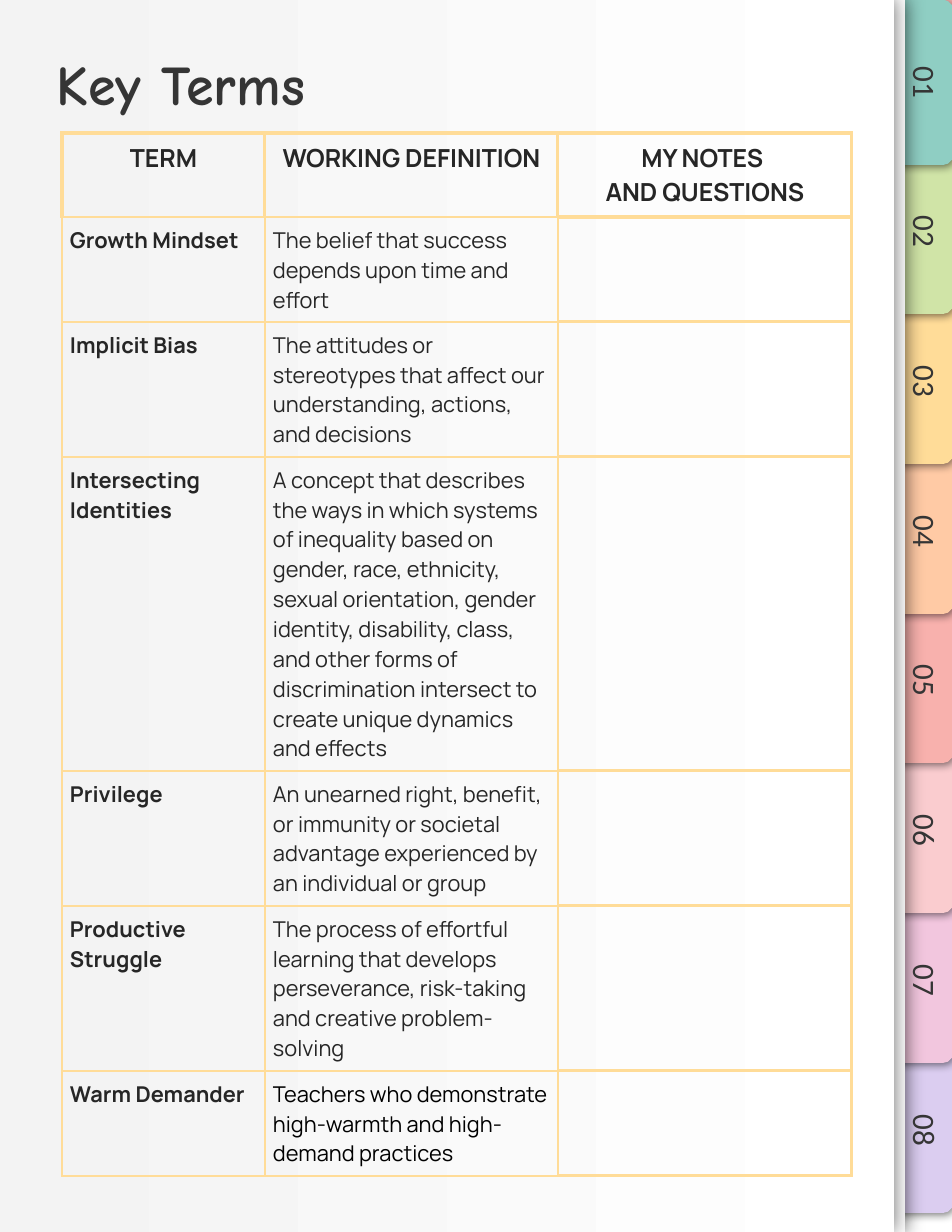
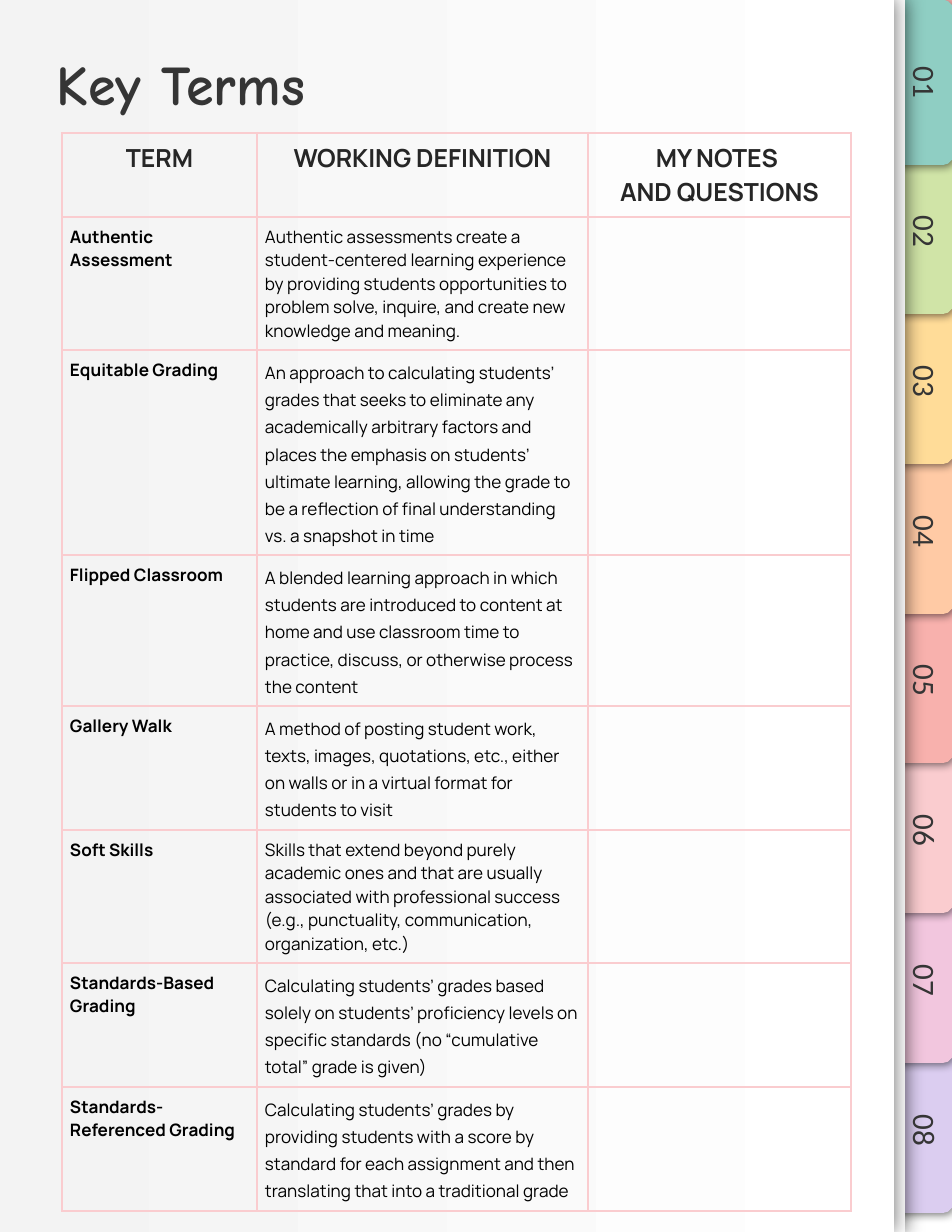
from lxml import etree
from pptx import Presentation, util as u
from pptx.dml.color import RGBColor
from pptx.enum import shapes, text
from pptx.oxml.ns import qn

PX_PER_INCH = 112
COLORS = {
    "backdrop": "F8B1AD", "white": "FFFFFF", "paper": "F3F3F3",
    "heading": "353535", "ink": "262626", "black": "000000",
    "yellow": "FFDC98", "pink": "FACCCF",
}
TAB_COLORS = ["8FCEC3", "D0E4A7", "FFDC98", "FFCAA5",
              "F8B1AD", "FACCCF", "F2C6DE", "DBCDF0"]
TAB_FIRST, TAB_LAST = 53, 1101
TAB_SHADOW = {"blur": 5.6, "distance": 1.5, "angle": 61}
PAPER_SHADOW = {"blur": 12.4, "distance": 0.8, "angle": 0}
TITLE_FONT, NUMBER_FONT, TABLE_FONT = "Comic Neue", "Calibri", "Manrope"
HEADERS = ["TERM", "WORKING DEFINITION", "MY NOTES \nAND QUESTIONS"]
TABLE_LEFT, TABLE_TOP, HEADER_HEIGHT = 62, 133, 84

# Each row: height, term, definition, then any format of the definition
MINDSET_TERMS = [
    (105, "Growth Mindset", "The belief that success depends upon time and effort", {}),
    (135, "Implicit Bias",
     "The attitudes or stereotypes that affect our understanding, actions, and decisions", {}),
    (314, "Intersecting Identities",
     "A concept that describes the ways in which systems of inequality based on gender, race, "
     "ethnicity, sexual orientation, gender identity, disability, class, and other forms of "
     "discrimination intersect to create unique dynamics and effects", {}),
    (135, "Privilege",
     "An unearned right, benefit, or immunity or societal advantage experienced by an "
     "individual or group", {}),
    (165, "Productive Struggle",
     "The process of effortful learning that develops perseverance, risk-taking and creative "
     "problem-solving", {}),
    (105, "Warm Demander",
     "Teachers who demonstrate high-warmth and high-demand practices", {"color": "black"}),
]
LOOSE = {"spacing": 1.15}
GRADING_TERMS = [
    (133, "Authentic Assessment",
     "Authentic assessments create a student-centered learning experience by providing students "
     "opportunities to problem solve, inquire, and create new knowledge and meaning.", {}),
    (205, "Equitable Grading",
     "An approach to calculating students’ grades that seeks to eliminate any academically "
     "arbitrary factors and places the emphasis on students’ ultimate learning, allowing the "
     "grade to be a reflection of final understanding vs. a snapshot in time", LOOSE),
    (151, "Flipped Classroom",
     "A blended learning approach in which students are introduced to content at home and use "
     "classroom time to practice, discuss, or otherwise process the content", LOOSE),
    (124, "Gallery Walk",
     "A method of posting student work, texts, images, quotations, etc., either on walls or in "
     "a virtual format for students to visit", LOOSE),
    (133, "Soft Skills",
     "Skills that extend beyond purely academic ones and that are usually associated with "
     "professional success (e.g., punctuality, communication, organization, etc.)", {}),
    (124, "Standards-Based Grading",
     "Calculating students’ grades based solely on students’ proficiency levels on specific "
     "standards (no “cumulative total” grade is given)", LOOSE),
    (124, "Standards-Referenced Grading",
     "Calculating students’ grades by providing students with a score by standard for each "
     "assignment and then translating that into a traditional grade", LOOSE),
]


def px(length):
    return u.Inches(length / PX_PER_INCH)


def rgb(color):
    return RGBColor.from_string(COLORS.get(color, color))


def write(frame, words, font=TABLE_FONT, size=14, color="ink", bold=False,
          centered=False, spacing=None):
    """Fill a text frame, one paragraph for each line of words."""
    for index, line in enumerate(words.split("\n")):
        para = frame.add_paragraph() if index else frame.paragraphs[0]
        para.alignment = text.PP_ALIGN.CENTER if centered else text.PP_ALIGN.LEFT
        if spacing:
            para.line_spacing = spacing
        span = para.add_run()
        span.text = line
        span.font.name, span.font.size, span.font.bold = font, u.Pt(size), bold
        span.font.color.rgb = rgb(color)


def set_margins(target, margin):
    target.margin_left = target.margin_right = px(margin)
    target.margin_top = target.margin_bottom = px(margin)


def add_shadow(shape, blur, distance, angle):
    effects = shape._element.spPr.find(qn("a:effectLst"))
    shadow = etree.SubElement(effects, qn("a:outerShdw"), blurRad=str(u.Pt(blur)),
                              dist=str(u.Pt(distance)), dir=str(angle * 60000),
                              algn="bl", rotWithShape="0")
    tint = etree.SubElement(shadow, qn("a:srgbClr"), val=COLORS["black"])
    etree.SubElement(tint, qn("a:alpha"), val="50000")


def add_borders(cell, color, left, right, top, bottom):
    """Draw the four edges of a cell, with widths in points."""
    properties = cell._tc.get_or_add_tcPr()
    for side, width in zip("LRTB", (left, right, top, bottom)):
        line = etree.SubElement(properties, qn(f"a:ln{side}"), w=str(u.Pt(width)))
        fill = etree.SubElement(line, qn("a:solidFill"))
        etree.SubElement(fill, qn("a:srgbClr"), val=COLORS[color])


class Notebook:
    """Holds the deck, its style and the current page."""

    def __init__(self):
        self.deck = Presentation()
        self.deck.slide_width, self.deck.slide_height = px(952), px(1232)
        self.page = None

    def add_shape(self, kind, left, top, width, height, fill, line=None, shadow=None):
        shape = self.page.shapes.add_shape(kind, px(left), px(top), px(width), px(height))
        if isinstance(fill, tuple):
            shape.fill.gradient()
            shape.fill.gradient_angle = 0
            for stop, color, position in zip(shape.fill.gradient_stops, fill, (0, 1)):
                stop.color.rgb, stop.position = rgb(color), position
        else:
            shape.fill.solid()
            shape.fill.fore_color.rgb = rgb(fill)
        if line:
            shape.line.color.rgb, shape.line.width = rgb(line), u.Pt(0.75)
        else:
            shape.line.fill.background()
        shape.shadow.inherit = False
        if shadow:
            add_shadow(shape, **shadow)
        return shape

    def add_text(self, words, left, top, width, height, anchor=text.MSO_ANCHOR.TOP, **style):
        box = self.page.shapes.add_textbox(px(left), px(top), px(width), px(height))
        box.text_frame.word_wrap = True
        box.text_frame.vertical_anchor = anchor
        set_margins(box.text_frame, 11)
        write(box.text_frame, words, **style)
        return box

    def add_page(self, title):
        """Start a page with its index tabs, paper and title."""
        self.page = self.deck.slides.add_slide(self.deck.slide_layouts[6])
        self.page.background.fill.solid()
        self.page.background.fill.fore_color.rgb = rgb("backdrop")
        rectangle = shapes.MSO_SHAPE.RECTANGLE
        self.add_shape(rectangle, 905, 961, 47, 271, "white", line="white")

        gaps = len(TAB_COLORS) - 1
        tops = [TAB_FIRST + index * (TAB_LAST - TAB_FIRST) // gaps
                for index in range(len(TAB_COLORS))]
        for top, color in reversed(list(zip(tops, TAB_COLORS))):
            tab = self.add_shape(shapes.MSO_SHAPE.ROUND_2_SAME_RECTANGLE,
                                 841, top, 165, 59, color, shadow=TAB_SHADOW)
            tab.adjustments[0], tab.adjustments[1] = 0.167, 0
            tab.rotation = 90

        self.add_shape(rectangle, 11, 0, 894, 1232, "white", shadow=PAPER_SHADOW)
        self.add_shape(rectangle, 0, 0, 894, 1232, ("paper", "white"), shadow=PAPER_SHADOW)
        for number, top in enumerate(tops, 1):
            label = self.add_text(f"{number:02}", 851, top - 6, 161, 71,
                                  anchor=text.MSO_ANCHOR.BOTTOM, font=NUMBER_FONT,
                                  size=20, color="heading", centered=True)
            label.rotation = 90
        self.add_text(title, 46, 39, 797, 71, font=TITLE_FONT, size=36,
                      color="heading", bold=True)

    def add_terms(self, terms, widths, border, thick, **style):
        """Add a table of terms; its header and notes column have thick edges."""
        heights = [HEADER_HEIGHT] + [height for height, *_ in terms]
        frame = self.page.shapes.add_table(len(heights), len(widths), px(TABLE_LEFT),
                                           px(TABLE_TOP), px(sum(widths)), px(sum(heights)))
        table = frame.table
        table.first_row = table.horz_banding = False
        for column, width in zip(table.columns, widths):
            column.width = px(width)
        for row, height in zip(table.rows, heights):
            row.height = px(height)

        for cell, words in zip(table.rows[0].cells, HEADERS):
            bottom = thick if words == HEADERS[-1] else 1
            add_borders(cell, border, thick, thick, thick, bottom)
            write(cell.text_frame, words, size=16, bold=True, centered=True)
        for row, (_, term, definition, extra) in zip(list(table.rows)[1:], terms):
            term_cell, definition_cell, notes_cell = row.cells
            add_borders(term_cell, border, 1, 1, 1, 1)
            add_borders(definition_cell, border, 1, 1, 1, 1)
            add_borders(notes_cell, border, 1, thick, thick, thick)
            write(term_cell.text_frame, term, bold=True, **style)
            write(definition_cell.text_frame, definition, **{**style, **extra})
        for cell in table.iter_cells():
            cell.fill.background()
            set_margins(cell, 8)


def main():
    notebook = Notebook()
    notebook.add_page("Key Terms")
    notebook.add_terms(MINDSET_TERMS, (203, 293, 294), "yellow", 2.25)
    notebook.add_page("Key Terms")
    notebook.add_terms(GRADING_TERMS, (195, 331, 263), "pink", 1.5, size=11, color="black")
    notebook.deck.save("out.pptx")


if __name__ == "__main__":
    main()
